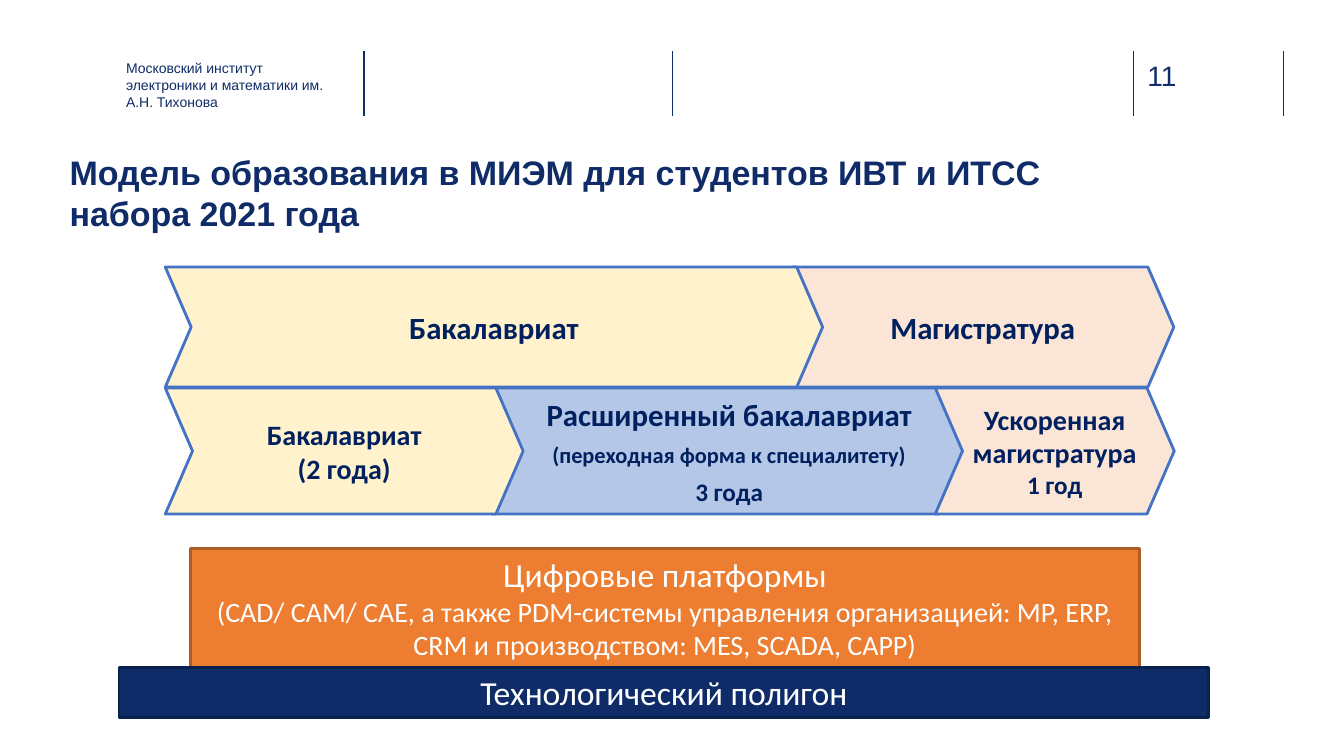
from dataclasses import dataclass
from lxml.etree import SubElement
from pptx import Presentation
from pptx.dml.color import RGBColor
from pptx.enum.shapes import MSO_CONNECTOR, MSO_SHAPE
from pptx.enum.text import MSO_ANCHOR, MSO_AUTO_SIZE, PP_ALIGN
from pptx.oxml.ns import qn
from pptx.util import Inches, Pt


@dataclass(frozen=True)
class Theme:
    navy: str = "0F2C68"
    rule: str = "102D69"
    label: str = "002060"
    white: str = "FFFFFF"
    outline: str = "4472C4"
    cream: str = "FFF2CC"
    peach: str = "FBE5D6"
    blue: str = "B4C7E7"
    orange: str = "ED7D31"
    orange_edge: str = "AF5C24"
    navy_edge: str = "0B214D"
    heading_font: str = "Arial"
    body_font: str = "Calibri"
    title: float = 24.3
    base: float = 24
    stage: float = 22
    detail: float = 20
    duration: float = 18
    note: float = 16
    institute: float = 10


@dataclass(frozen=True)
class Area:
    left: float
    top: float
    width: float
    height: float


@dataclass(frozen=True)
class Line:
    text: str
    size: float
    breaks_before: bool = False


@dataclass(frozen=True)
class Stage:
    width: float
    fill: str
    lines: tuple[Line, ...]
    layer: int
    space_after: float = 0


@dataclass(frozen=True)
class Track:
    top: float
    height: float
    stages: tuple[Stage, ...]


@dataclass(frozen=True)
class Foundation:
    area: Area
    fill: str
    edge: str
    lines: tuple[Line, ...]


THEME = Theme()
SLIDE_WIDTH, SLIDE_HEIGHT = Inches(13.33), Inches(7.5)
RULE_COLUMNS = (27.08, 50.04, 84.32, 95.5)
RULE_TOP, RULE_BOTTOM = 6.8, 15.33
TRACK_LEFT, STAGE_OVERLAP, CHEVRON_POINT = 12.3, 2.3, 0.216

TRACKS = (
    Track(35.33, 15.87, (
        Stage(48.91, THEME.cream, (Line("Бакалавриат", THEME.stage),), 2, 10.9),
        Stage(28.43, THEME.peach, (Line("Магистратура", THEME.stage),), 1),
    )),
    Track(51.33, 16.67, (
        Stage(26.63, THEME.cream, (
            Line("Бакалавриат", THEME.detail),
            Line("(2 года)", THEME.detail, breaks_before=True),
        ), 3, 10.9),
        Stage(35.26, THEME.blue, (
            Line("Расширенный бакалавриат", THEME.stage),
            Line("(переходная форма к специалитету)", THEME.note),
            Line("3 года", THEME.duration),
        ), 1, 6),
        Stage(17.78, THEME.peach, (
            Line("Ускоренная магистратура", THEME.detail),
            Line("1 год", THEME.duration),
        ), 2),
    )),
)

FOUNDATIONS = (
    Foundation(Area(14.18, 72.53, 70.59, 15.73), THEME.orange, THEME.orange_edge, (
        Line("Цифровые платформы", THEME.base),
        Line("(CAD/ CAM/ CAE, а также PDM-системы управления организацией: MP, ERP, "
             "CRM и производством: MES, SCADA, CAPP)", THEME.detail, breaks_before=True),
    )),
    Foundation(Area(8.85, 88.27, 81.1, 6.67), THEME.navy, THEME.navy_edge, (
        Line("Технологический полигон", THEME.base),
    )),
)


def across(share: float) -> int:
    return round(SLIDE_WIDTH * share / 100)


def down(share: float) -> int:
    return round(SLIDE_HEIGHT * share / 100)


def frame(area: Area) -> tuple[int, int, int, int]:
    return across(area.left), down(area.top), across(area.width), down(area.height)


def write(text_frame, lines: tuple[Line, ...], *, font: str, color: str, bold: bool = False,
          align=PP_ALIGN.LEFT, anchor=MSO_ANCHOR.TOP, space_after: float = 0,
          inset: bool = False) -> None:
    text_frame.word_wrap = True
    text_frame.auto_size = MSO_AUTO_SIZE.NONE
    text_frame.vertical_anchor = anchor
    side, edge = (Inches(0.1), Inches(0.05)) if inset else (0, 0)
    text_frame.margin_left = text_frame.margin_right = side
    text_frame.margin_top = text_frame.margin_bottom = edge
    paragraph = text_frame.paragraphs[0]
    for index, line in enumerate(lines):
        if line.breaks_before:
            paragraph.add_line_break()
        elif index:
            paragraph = text_frame.add_paragraph()
        paragraph.alignment = align
        paragraph.space_before = Pt(0)
        paragraph.space_after = Pt(space_after)
        run = paragraph.add_run()
        run.text = line.text
        run.font.name = font
        run.font.size = Pt(line.size)
        run.font.bold = bold
        run.font.color.rgb = RGBColor.from_string(color)


def draw_block(slide, preset, area: Area, fill: str, edge: str):
    block = slide.shapes.add_shape(preset, *frame(area))
    block.shadow.inherit = False
    block.fill.solid()
    block.fill.fore_color.rgb = RGBColor.from_string(fill)
    block.line.color.rgb = RGBColor.from_string(edge)
    block.line.width = Pt(2)
    return block


def draw_rule(slide, column: float) -> None:
    rule = slide.shapes.add_connector(MSO_CONNECTOR.STRAIGHT, across(column), down(RULE_TOP),
                                      across(column), down(RULE_BOTTOM))
    rule.line.color.rgb = RGBColor.from_string(THEME.rule)
    rule.line.width = Pt(1)
    SubElement(rule._element.spPr, qn("a:effectLst"))


def draw_track(slide, track: Track) -> None:
    placed = []
    left = TRACK_LEFT
    for stage in track.stages:
        placed.append((stage, Area(left, track.top, stage.width, track.height)))
        left += stage.width - STAGE_OVERLAP
    for stage, area in sorted(placed, key=lambda item: item[0].layer):
        chevron = draw_block(slide, MSO_SHAPE.CHEVRON, area, stage.fill, THEME.outline)
        chevron.adjustments[0] = CHEVRON_POINT
        write(chevron.text_frame, stage.lines, font=THEME.body_font, color=THEME.label, bold=True,
              align=PP_ALIGN.CENTER, anchor=MSO_ANCHOR.MIDDLE, space_after=stage.space_after,
              inset=True)


def draw_foundation(slide, foundation: Foundation) -> None:
    block = draw_block(slide, MSO_SHAPE.RECTANGLE, foundation.area, foundation.fill,
                       foundation.edge)
    write(block.text_frame, foundation.lines, font=THEME.body_font, color=THEME.white,
          align=PP_ALIGN.CENTER, anchor=MSO_ANCHOR.MIDDLE, space_after=6, inset=True)


def main() -> None:
    deck = Presentation()
    deck.slide_width, deck.slide_height = SLIDE_WIDTH, SLIDE_HEIGHT
    slide = deck.slides.add_slide(deck.slide_layouts[5])
    for column in RULE_COLUMNS:
        draw_rule(slide, column)

    title = slide.shapes.title
    title.left, title.top, title.width, title.height = frame(Area(5.18, 20, 86.05, 7.47))
    write(title.text_frame, (
        Line("Модель образования в МИЭМ для студентов ИВТ и ИТСС", THEME.title),
        Line("набора 2021 года", THEME.title, breaks_before=True),
    ), font=THEME.heading_font, color=THEME.navy, bold=True)

    page_number = slide.shapes.add_textbox(*frame(Area(85.37, 7.73, 5.48, 4.53)))
    write(page_number.text_frame, (Line("11", THEME.detail),),
          font=THEME.heading_font, color=THEME.rule)
    institute = slide.shapes.add_textbox(*frame(Area(9.38, 7.87, 15.6, 6)))
    write(institute.text_frame, (
        Line("Московский институт электроники и математики им. А.Н. Тихонова", THEME.institute),
    ), font=THEME.heading_font, color=THEME.navy)

    for track in TRACKS:
        draw_track(slide, track)
    for foundation in FOUNDATIONS:
        draw_foundation(slide, foundation)
    deck.save("out.pptx")


if __name__ == "__main__":
    main()
